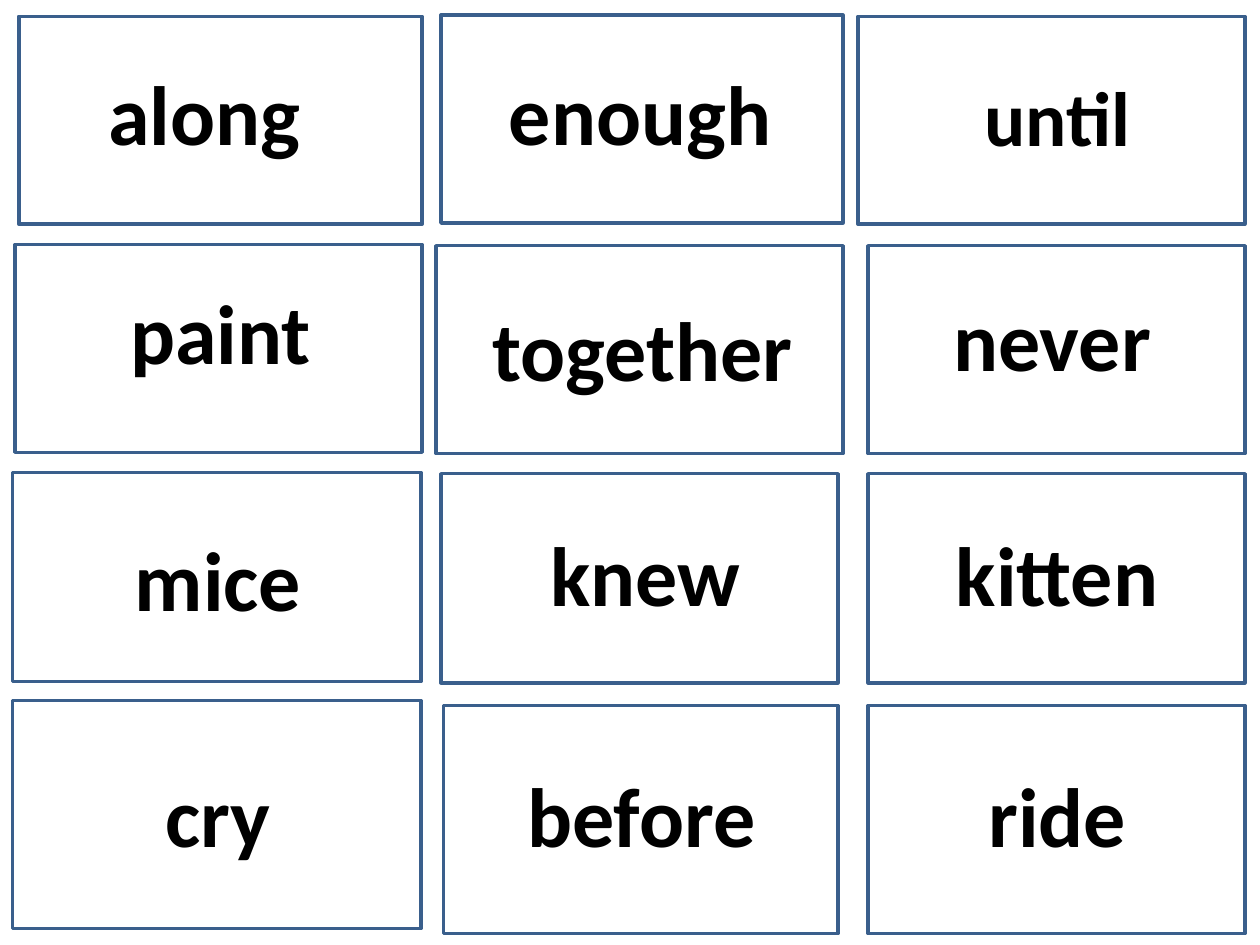
from pptx import Presentation
from pptx.dml.color import RGBColor
from pptx.enum.shapes import MSO_SHAPE as Shape
from pptx.enum.text import MSO_AUTO_SIZE as Fit, PP_ALIGN as Align
from pptx.util import Inches, Pt


def color(code):
    return RGBColor.from_string(code)


class Deck:
    font = "Calibri"
    ink = "000000"
    edge = "3A5F8C"
    width = 2.68

    def __init__(self):
        self.prs = Presentation()
        self.prs.slide_width = Inches(10)
        self.prs.slide_height = Inches(7.5)
        self.slide = self.prs.slides.add_slide(self.prs.slide_layouts[6])

    def frame(self, left, top, right, height):
        box = self.slide.shapes.add_shape(
            Shape.RECTANGLE, Inches(left), Inches(top),
            Inches(right - left), Inches(height))
        box.shadow.inherit = False
        box.fill.background()
        box.line.color.rgb = color(self.edge)
        box.line.width = Pt(2)

    def word(self, text, left, top, size=48):
        height = 0.91 if size == 48 else 0.84
        box = self.slide.shapes.add_textbox(
            Inches(left), Inches(top), Inches(self.width), Inches(height))
        frame = box.text_frame
        frame.word_wrap = True
        frame.auto_size = Fit.SHAPE_TO_FIT_TEXT
        par = frame.paragraphs[0]
        par.text = text
        par.alignment = Align.CENTER
        par.font.name = self.font
        par.font.size = Pt(size)
        par.font.bold = True
        par.font.color.rgb = color(self.ink)


HEIGHTS = [1.65, 1.65, 1.66, 1.81]

# Each column: right edges, then card corners and words from top to bottom.
COLUMNS = [
    ([3.35, 3.35, 3.34, 3.34], [
        ((0.15, 0.13), ("along", 0.28, 0.44)),
        ((0.12, 1.94), ("paint", 0.41, 2.18)),
        ((0.1, 3.75), ("mice", 0.39, 4.14)),
        ((0.1, 5.56), ("cry", 0.39, 6.01)),
    ]),
    ([6.69, 6.69, 6.65, 6.65], [
        ((3.5, 0.12), ("enough", 3.74, 0.44)),
        ((3.46, 1.95), ("together", 3.76, 2.31)),
        ((3.5, 3.76), ("knew", 3.78, 4.1)),
        ((3.52, 5.6), ("before", 3.75, 6.01)),
    ]),
    ([9.88] * 4, [
        ((6.81, 0.13), ("until", 7.05, 0.5, 44)),
        ((6.89, 1.95), ("never", 7.01, 2.23)),
        ((6.89, 3.76), ("kitten", 7.05, 4.1)),
        ((6.89, 5.6), ("ride", 7.05, 6.01)),
    ]),
]


def main():
    deck = Deck()
    for rights, cards in COLUMNS:
        for right, height, (corner, label) in zip(rights, HEIGHTS, cards):
            deck.frame(*corner, right, height)
            deck.word(*label)
    deck.prs.save("out.pptx")


if __name__ == "__main__":
    main()
